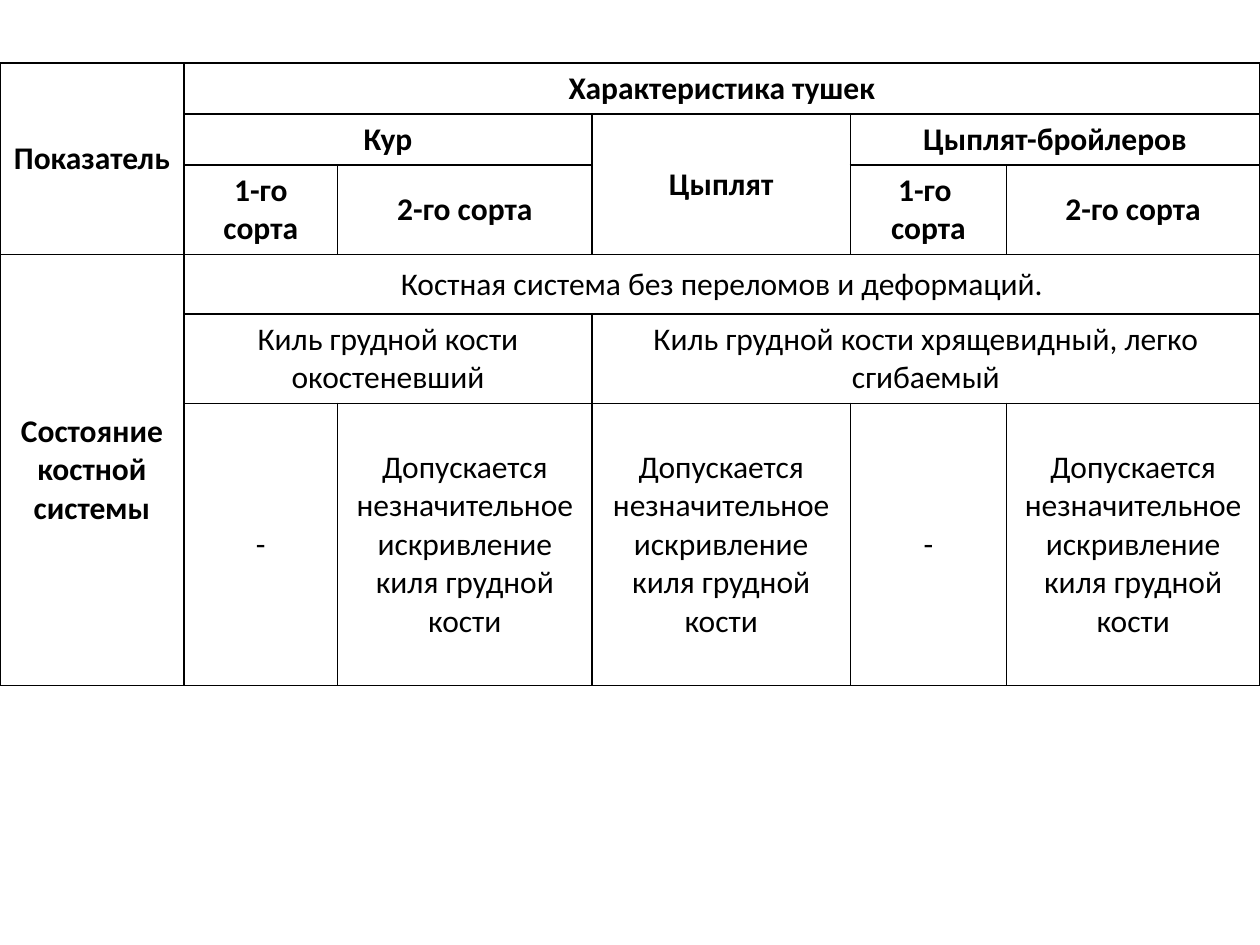
from typing import NamedTuple

from lxml.etree import SubElement
from pptx import Presentation
from pptx.dml.color import RGBColor
from pptx.enum.text import MSO_ANCHOR, PP_ALIGN
from pptx.oxml.ns import qn
from pptx.util import Inches, Pt

FONT, SIZE = "Calibri", 18
INK, PAPER = "000000", "FFFFFF"
COLS = [1.46, 1.22, 2.02, 2.05, 1.24, 2.01]
ROWS = [0.4, 0.4, 0.71, 0.47, 0.71, 2.24]
TOP = 0.5
KEEL_BEND = "Допускается незначительное искривление киля грудной кости"


class Entry(NamedTuple):
    row: int
    col: int
    text: str
    rows: int = 1
    cols: int = 1
    bold: bool = False


ENTRIES = [
    Entry(0, 0, "Показатель", rows=3, bold=True),
    Entry(0, 1, "Характеристика тушек", cols=5, bold=True),
    Entry(1, 1, "Кур", cols=2, bold=True),
    Entry(1, 3, "Цыплят", rows=2, bold=True),
    Entry(1, 4, "Цыплят-бройлеров", cols=2, bold=True),
    Entry(2, 1, "1-го сорта", bold=True),
    Entry(2, 2, "2-го сорта", bold=True),
    Entry(2, 4, "1-го \nсорта", bold=True),
    Entry(2, 5, "2-го сорта", bold=True),
    Entry(3, 0, "Состояние костной системы", rows=3, bold=True),
    Entry(3, 1, "Костная система без переломов и деформаций.", cols=5),
    Entry(4, 1, "Киль грудной кости окостеневший", cols=2),
    Entry(4, 3, "Киль грудной кости хрящевидный, легко сгибаемый", cols=3),
    Entry(5, 1, "-"),
    Entry(5, 2, KEEL_BEND),
    Entry(5, 3, KEEL_BEND),
    Entry(5, 4, "-"),
    Entry(5, 5, KEEL_BEND),
]


def rgb(color: str) -> RGBColor:
    return RGBColor.from_string(color)


def add_borders(cell, color: str, width: float) -> None:
    """Put a line on all four sides; the lines must precede the cell's fill."""
    tc_pr = cell._tc.get_or_add_tcPr()
    for i, side in enumerate(("lnL", "lnR", "lnT", "lnB")):
        ln = SubElement(tc_pr, qn(f"a:{side}"), w=str(Pt(width)))
        fill = SubElement(ln, qn("a:solidFill"))
        SubElement(fill, qn("a:srgbClr"), val=color)
        tc_pr.insert(i, ln)


def write_entry(table, entry: Entry) -> None:
    cell = table.cell(entry.row, entry.col)
    if entry.rows * entry.cols > 1:
        cell.merge(table.cell(entry.row + entry.rows - 1,
                              entry.col + entry.cols - 1))
    cell.vertical_anchor = MSO_ANCHOR.MIDDLE
    cell.text_frame.text = entry.text
    for p in cell.text_frame.paragraphs:
        p.alignment = PP_ALIGN.CENTER
        for r in p.runs:
            r.font.name, r.font.size = FONT, Pt(SIZE)
            r.font.bold = entry.bold
            r.font.color.rgb = rgb(INK)


def add_grid(s):
    frame = s.shapes.add_table(len(ROWS), len(COLS), 0, Inches(TOP),
                               Inches(sum(COLS)), Inches(sum(ROWS)))
    table = frame.table
    table.first_row = table.horz_banding = False
    for column, width in zip(table.columns, COLS):
        column.width = Inches(width)
    for row, height in zip(table.rows, ROWS):
        row.height = Inches(height)
    for cell in table.iter_cells():
        cell.fill.solid()
        cell.fill.fore_color.rgb = rgb(PAPER)
        add_borders(cell, INK, 1)
        # Covered cells need the small size too, or they stretch their rows.
        cell.text_frame.paragraphs[0].font.size = Pt(SIZE)
    return table


def main() -> None:
    prs = Presentation()
    prs.slide_width, prs.slide_height = Inches(10), Inches(7.5)
    s = prs.slides.add_slide(prs.slide_layouts[6])
    table = add_grid(s)
    for entry in ENTRIES:
        write_entry(table, entry)
    prs.save("out.pptx")


if __name__ == "__main__":
    main()
